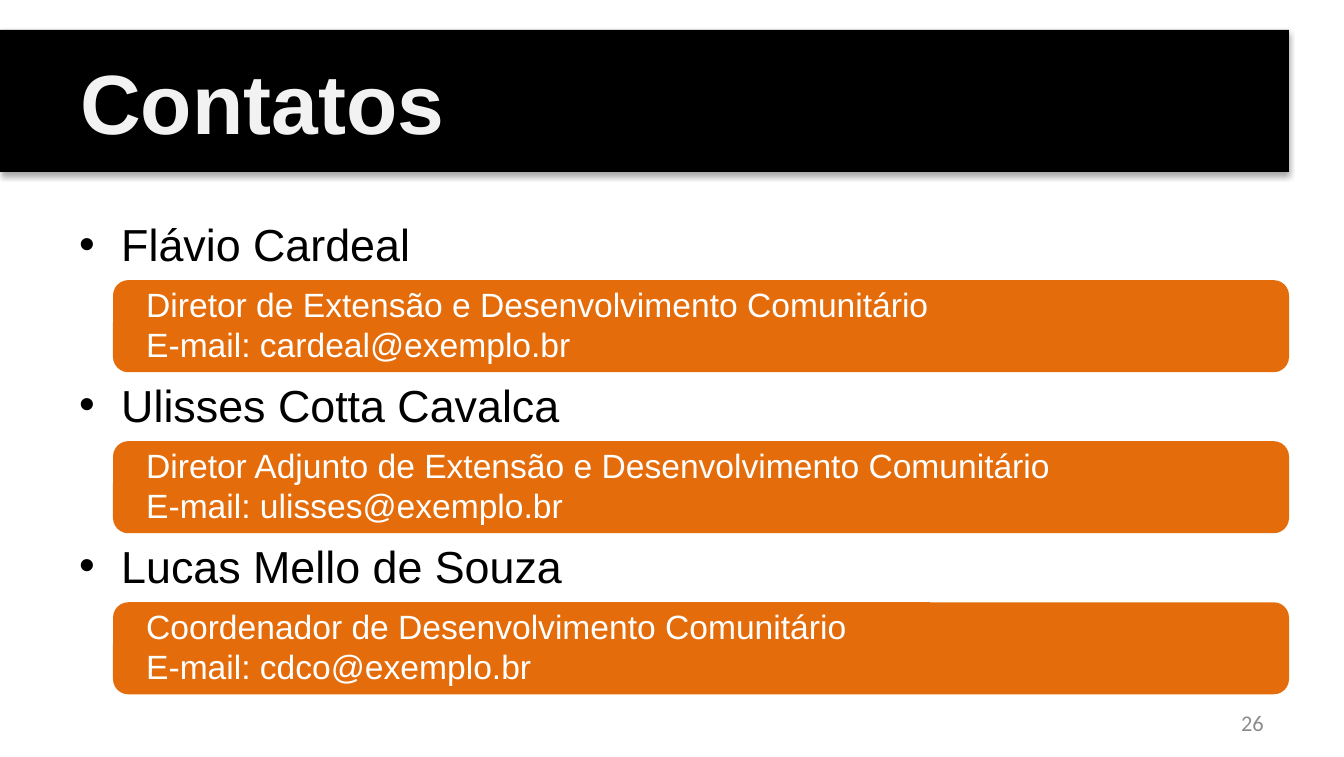
from dataclasses import dataclass
from typing import Optional

from lxml import etree
from pptx import Presentation
from pptx import util as u
from pptx.dml.color import RGBColor
from pptx.enum import shapes, text
from pptx.oxml import ns

EMU_PER_PX = 914400 / 134.4


def px(length: int) -> u.Emu:
    return u.Emu(round(length * EMU_PER_PX))


@dataclass(frozen=True)
class Theme:
    black: str = "000000"
    orange: str = "E46C0A"
    white: str = "FFFFFF"
    title_color: str = "F2F2F2"
    number_color: str = "8C8C8C"
    font: str = "Arial"
    number_font: str = "Calibri"
    title_size: int = 45
    name_size: int = 24
    detail_size: int = 18
    number_size: int = 12
    block_gap: float = 7.1


@dataclass(frozen=True)
class Box:
    left: int
    top: int
    width: int
    height: int


@dataclass(frozen=True)
class Contact:
    name: str
    role: str
    email: str


@dataclass(frozen=True)
class Style:
    size: int
    color: str
    font: str
    bold: bool = False


THEME = Theme()
TITLE_STYLE = Style(THEME.title_size, THEME.title_color, THEME.font, True)
NAME_STYLE = Style(THEME.name_size, THEME.black, THEME.font)
DETAIL_STYLE = Style(THEME.detail_size, THEME.white, THEME.font)
NUMBER_STYLE = Style(THEME.number_size, THEME.number_color, THEME.number_font)

CONTACTS = [
    Contact("Flávio Cardeal",
            "Diretor de Extensão e Desenvolvimento Comunitário",
            "cardeal@exemplo.br"),
    Contact("Ulisses Cotta Cavalca",
            "Diretor Adjunto de Extensão e Desenvolvimento Comunitário",
            "ulisses@exemplo.br"),
    Contact("Lucas Mello de Souza",
            "Coordenador de Desenvolvimento Comunitário",
            "cdco@exemplo.br"),
]

SLIDE_WIDTH = u.Inches(10)
SLIDE_HEIGHT = u.Inches(5.63)
BANNER = Box(0, 30, 1289, 142)
FIRST_CARD = Box(113, 280, 1176, 92)
CARD_PITCH = 161
CONTACT_LIST = Box(66, 210, 1223, 543)
NUMBER_BOX = Box(964, 702, 313, 40)
DETAIL_INDENT = 67
BULLET_INDENT = 42


def add_block(slide, kind, box: Box, color: str):
    shape = slide.shapes.add_shape(
        kind, px(box.left), px(box.top), px(box.width), px(box.height))
    shape.shadow.inherit = False
    shape.fill.solid()
    shape.fill.fore_color.rgb = RGBColor.from_string(color)
    shape.line.fill.background()
    return shape


def add_text_box(slide, box: Box):
    shape = slide.shapes.add_textbox(
        px(box.left), px(box.top), px(box.width), px(box.height))
    shape.text_frame.word_wrap = True
    return shape.text_frame


def add_run(paragraph, content: str, style: Style) -> None:
    run = paragraph.add_run()
    run.text = content
    run.font.name = style.font
    run.font.size = u.Pt(style.size)
    run.font.bold = style.bold
    run.font.color.rgb = RGBColor.from_string(style.color)


def set_indent(paragraph, margin: int, bullet: Optional[str] = None) -> None:
    properties = paragraph._p.get_or_add_pPr()
    properties.set("marL", str(px(margin)))
    properties.set("indent", str(-px(margin) if bullet else 0))
    if bullet:
        etree.SubElement(properties, ns.qn("a:buFont"), typeface=THEME.font)
        etree.SubElement(properties, ns.qn("a:buChar"), char=bullet)


def add_drop_shadow(shape) -> None:
    effects = shape._element.spPr.find(ns.qn("a:effectLst"))
    shadow = etree.SubElement(
        effects, ns.qn("a:outerShdw"), blurRad=str(u.Pt(3.1)),
        dist=str(u.Pt(1.8)), dir="5400000", rotWithShape="0")
    color = etree.SubElement(shadow, ns.qn("a:srgbClr"), val=THEME.black)
    etree.SubElement(color, ns.qn("a:alpha"), val="35000")


def add_banner(slide, title: str) -> None:
    banner = add_block(slide, shapes.MSO_SHAPE.RECTANGLE, BANNER, THEME.black)
    add_drop_shadow(banner)
    banner.text_frame.vertical_anchor = text.MSO_ANCHOR.MIDDLE
    paragraph = banner.text_frame.paragraphs[0]
    paragraph.alignment = text.PP_ALIGN.LEFT
    set_indent(paragraph, DETAIL_INDENT)
    add_run(paragraph, title, TITLE_STYLE)


def add_contacts(slide, contacts: list[Contact]) -> None:
    frame = add_text_box(slide, CONTACT_LIST)
    for index, contact in enumerate(contacts):
        lines = [
            (contact.name, NAME_STYLE, THEME.block_gap if index else 0),
            (contact.role, DETAIL_STYLE, THEME.block_gap),
            (f"E-mail: {contact.email}", DETAIL_STYLE, 0),
        ]
        for content, style, gap in lines:
            is_first = not frame.paragraphs[0].runs
            paragraph = frame.paragraphs[0] if is_first else frame.add_paragraph()
            paragraph.alignment = text.PP_ALIGN.JUSTIFY
            paragraph.space_before = u.Pt(gap)
            if style is NAME_STYLE:
                set_indent(paragraph, BULLET_INDENT, "•")
            else:
                set_indent(paragraph, DETAIL_INDENT)
            add_run(paragraph, content, style)


def add_slide_number(slide, number: str) -> None:
    frame = add_text_box(slide, NUMBER_BOX)
    frame.vertical_anchor = text.MSO_ANCHOR.MIDDLE
    paragraph = frame.paragraphs[0]
    paragraph.alignment = text.PP_ALIGN.RIGHT
    add_run(paragraph, number, NUMBER_STYLE)


def main() -> None:
    presentation = Presentation()
    presentation.slide_width = SLIDE_WIDTH
    presentation.slide_height = SLIDE_HEIGHT
    slide = presentation.slides.add_slide(presentation.slide_layouts[6])

    # Cards behind the contact details
    for index in range(len(CONTACTS)):
        card = Box(FIRST_CARD.left, FIRST_CARD.top + index * CARD_PITCH,
                   FIRST_CARD.width, FIRST_CARD.height)
        add_block(slide, shapes.MSO_SHAPE.ROUNDED_RECTANGLE, card, THEME.orange)

    # Title, contact list and slide number
    add_banner(slide, "Contatos")
    add_contacts(slide, CONTACTS)
    add_slide_number(slide, "26")

    presentation.save("out.pptx")


if __name__ == "__main__":
    main()
